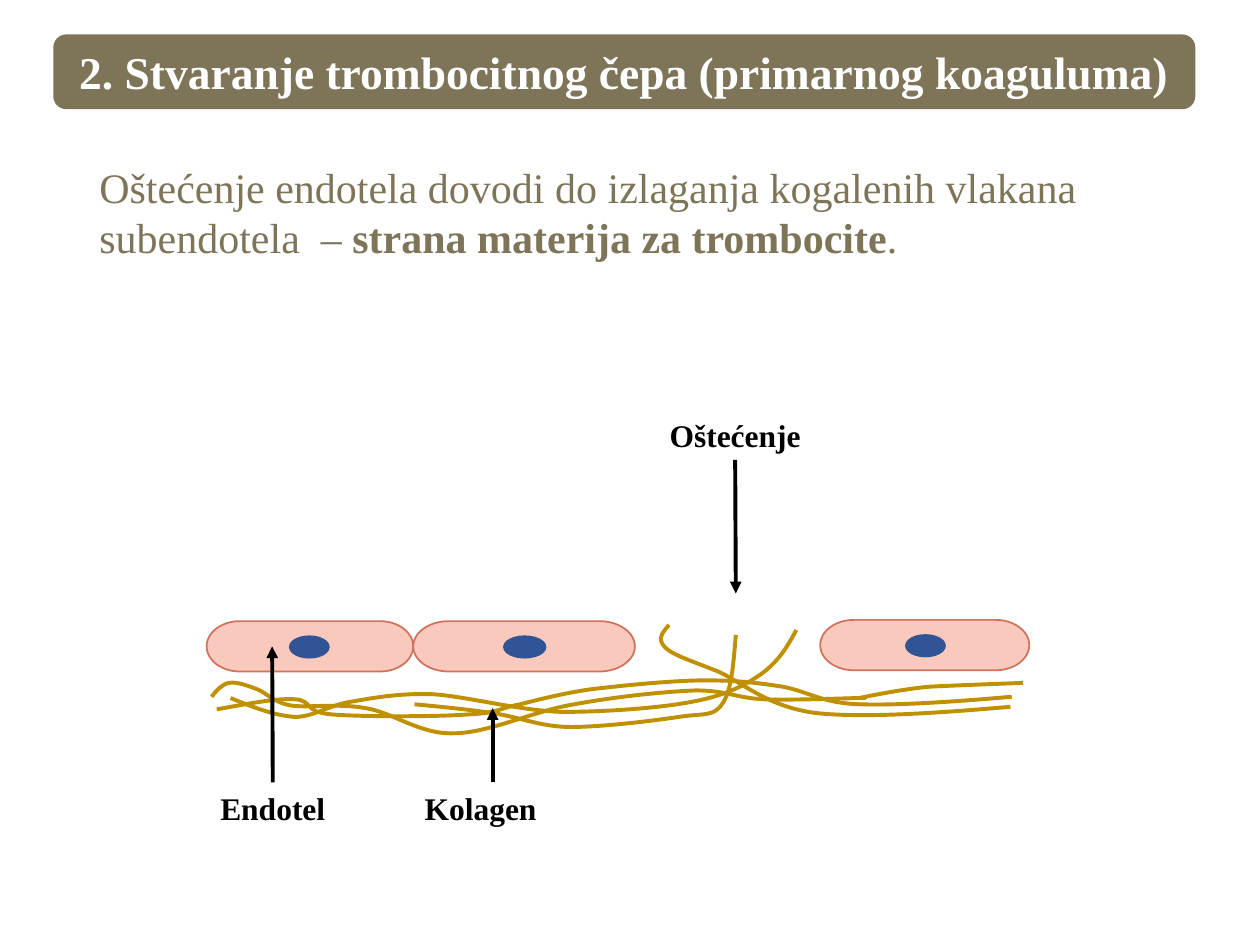
import pptx
import pptx.util
import pptx.dml.color
import pptx.enum.shapes
import pptx.enum.text
import pptx.oxml
import pptx.oxml.ns
from pptx.util import Inches

FONT = "Times New Roman"
COLORS = {
    "olive": "7E7559", "white": "FFFFFF", "black": "000000",
    "cell": "FAC9BE", "wall": "CF725B",
    "core": "2F5597", "rim": "325491", "fiber": "BF9000",
}
KIND = pptx.enum.shapes.MSO_SHAPE
ALIGN = pptx.enum.text.PP_ALIGN

# Cell: left, top, width; nucleus: left, width
CELLS = [(1.64, 4.93, 1.64, 2.3, 0.31),
         (6.51, 4.92, 1.66, 7.19, 0.31),
         (3.28, 4.93, 1.76, 4.0, 0.33)]

# Each fiber: start, then (control, control, end) triples, in 1/100 inch
FIBERS = [
    [(803, 553), (758, 557), (712, 560), (682, 559), (652, 558), (642, 549),
     (621, 545), (601, 542), (586, 540), (560, 540), (535, 540), (495, 544),
     (470, 547), (446, 550), (413, 559), (413, 559), (396, 562), (396, 566),
     (372, 567), (347, 569), (286, 569), (263, 567), (240, 565), (249, 556),
     (234, 555), (219, 554), (195, 559), (172, 563)],
    [(632, 500), (625, 513), (618, 525), (604, 535), (591, 544), (576, 552),
     (549, 557), (523, 562), (480, 565), (446, 565), (412, 564), (372, 553),
     (344, 551), (316, 550), (296, 554), (278, 557), (260, 560), (249, 569),
     (234, 569), (218, 568), (200, 561), (183, 554)],
    [(168, 553), (172, 548), (176, 543), (182, 542), (188, 541), (196, 544),
     (204, 547), (212, 550), (216, 557), (231, 560), (245, 562), (268, 558),
     (290, 562), (311, 565), (333, 583), (360, 582), (388, 582), (424, 564),
     (456, 559), (488, 553), (527, 549), (552, 548), (577, 548), (584, 554),
     (606, 555), (627, 556), (681, 554), (681, 554), (694, 554), (682, 554),
     (682, 554), (692, 552), (716, 547), (738, 545), (759, 544), (786, 543),
     (812, 542)],
    [(802, 561), (744, 566), (686, 570), (648, 566), (609, 561), (590, 542),
     (570, 533), (550, 525), (534, 520), (528, 514), (521, 507), (526, 502),
     (531, 496)],
    [(329, 559), (350, 561), (371, 563), (391, 566), (412, 569), (429, 577),
     (453, 577), (478, 577), (519, 572), (539, 569), (559, 566), (566, 569),
     (573, 559), (581, 548), (582, 526), (584, 504)],
]


def rgb(name):
    return pptx.dml.color.RGBColor.from_string(COLORS[name])


def stroke(line, color, width):
    line.color.rgb = rgb(color)
    line.width = pptx.util.Pt(width)


def add_runs(par, runs, size, color):
    for text, bold in runs:
        run = par.add_run()
        run.text = text
        run.font.name = FONT
        run.font.size = pptx.util.Pt(size)
        run.font.bold = bold
        run.font.color.rgb = rgb(color)


def add_form(shapes, kind, box, fill, line):
    form = shapes.add_shape(kind, *map(Inches, box))
    form.shadow.inherit = False
    form.fill.solid()
    form.fill.fore_color.rgb = rgb(fill)
    stroke(form.line, line, 1)
    return form


def add_text(shapes, box, runs, size, color, align):
    text = shapes.add_textbox(*map(Inches, box))
    text.text_frame.word_wrap = True
    par = text.text_frame.paragraphs[0]
    par.alignment = align
    add_runs(par, runs, size, color)
    return text


def add_label(shapes, text, left, top, height):
    return add_text(shapes, (left, top, 1.93, height), [(text, True)],
                    18, "black", ALIGN.CENTER)


def add_cell(shapes, left, top, width, core, span):
    add_form(shapes, KIND.FLOWCHART_TERMINATOR, (left, top, width, 0.4),
             "cell", "wall")
    add_form(shapes, KIND.OVAL, (core, top + 0.12, span, 0.17), "core", "rim")


def add_fiber(shapes, points):
    ends = points[::3]
    pen = shapes.build_freeform(*ends[0], scale=Inches(0.01))
    pen.add_line_segments(ends[1:], close=False)
    fiber = pen.convert_to_shape()
    fiber.shadow.inherit = False
    fiber.fill.background()
    stroke(fiber.line, "fiber", 2.25)
    # Turn each straight segment into a cubic curve
    left = min(x for x, y in ends)
    top = min(y for x, y in ends)
    qn = pptx.oxml.ns.qn
    for i, seg in enumerate(list(fiber._element.iter(qn("a:lnTo")))):
        curve = seg.makeelement(qn("a:cubicBezTo"), {})
        for x, y in points[3 * i + 1:3 * i + 4]:
            spot = {"x": str(x - left), "y": str(y - top)}
            curve.append(seg.makeelement(qn("a:pt"), spot))
        seg.getparent().replace(seg, curve)


def add_arrow(shapes, start, end, label=None, side=0):
    arrow = shapes.add_connector(pptx.enum.shapes.MSO_CONNECTOR.STRAIGHT,
                                 *map(Inches, start + end))
    if label is not None:
        arrow.begin_connect(label, side)
    stroke(arrow.line, "black", 2.25)
    qn = pptx.oxml.ns.qn
    line = arrow.line._get_or_add_ln()
    line.append(line.makeelement(qn("a:tailEnd"), {"type": "triangle"}))
    props = arrow._element.spPr
    props.append(props.makeelement(qn("a:effectLst"), {}))


def main():
    deck = pptx.Presentation()
    deck.slide_width, deck.slide_height = Inches(10), Inches(7.5)
    slide = deck.slides.add_slide(deck.slide_layouts[6])

    # Title bar
    bar = add_form(slide.shapes, KIND.ROUNDED_RECTANGLE,
                   (0.43, 0.28, 9.05, 0.58), "olive", "olive")
    bar.text_frame.word_wrap = True
    bar.text_frame.vertical_anchor = pptx.enum.text.MSO_ANCHOR.MIDDLE
    par = bar.text_frame.paragraphs[0]
    par.alignment = ALIGN.CENTER
    add_runs(par, [("2. Stvaranje trombocitnog čepa (primarnog koaguluma)",
                    True)], 26, "white")

    # Vessel wall: cells and collagen fibers
    wall = slide.shapes.add_group_shape().shapes
    for cell in CELLS:
        add_cell(wall, *cell)
    for points in FIBERS:
        add_fiber(wall, points)

    # Labels and arrows
    lining = add_label(wall, "Endotel", 1.2, 6.21, 0.59)
    add_label(wall, "Kolagen", 2.85, 6.21, 0.59)
    damage = add_label(wall, "Oštećenje", 4.87, 3.25, 0.4)
    add_arrow(wall, (2.17, 6.21), (2.16, 5.13), lining, 0)
    add_arrow(wall, (3.91, 6.21), (3.91, 5.62))
    add_arrow(wall, (5.84, 3.65), (5.84, 4.71), damage, 2)

    # Body text
    add_text(slide.shapes, (0.69, 1.23, 8.76, 0.91), [
        ("Oštećenje endotela dovodi do izlaganja kogalenih vlakana "
         "subendotela  – ", False),
        ("strana materija za trombocite", True),
        (".", False)], 24, "olive", ALIGN.LEFT)

    deck.save("out.pptx")


if __name__ == "__main__":
    main()
